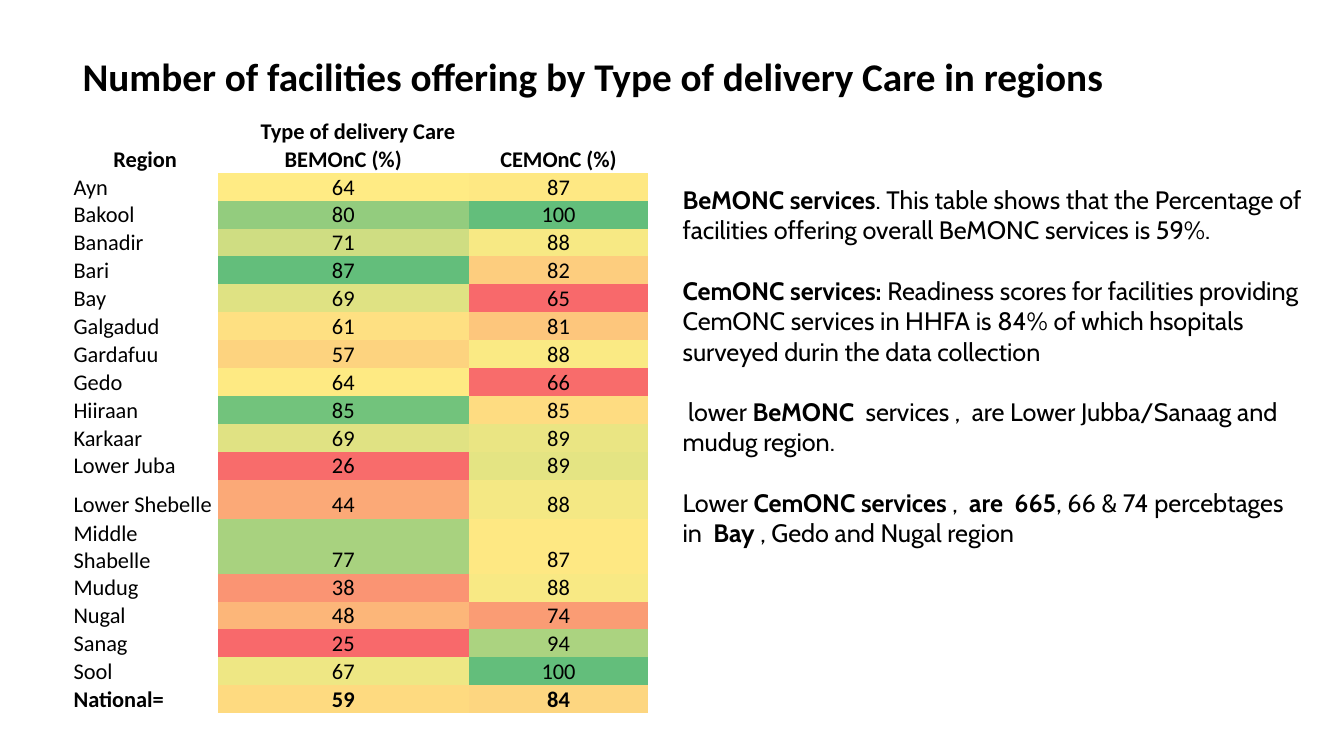
import pptx
import pptx.util
import pptx.dml.color
import pptx.enum.text
import pptx.oxml.ns
import lxml.etree

Inches, Pt = pptx.util.Inches, pptx.util.Pt
RGBColor = pptx.dml.color.RGBColor
ALIGN = pptx.enum.text.PP_ALIGN
ANCHOR = pptx.enum.text.MSO_ANCHOR
AUTO_SIZE = pptx.enum.text.MSO_AUTO_SIZE
qn = pptx.oxml.ns.qn

# Content
BLACK = RGBColor(0x00, 0x00, 0x00)
TITLE = "Number of facilities offering by Type of delivery Care in regions"
GROUP_HEADING = "Type of delivery Care "
HEADINGS = ("Region", "BEMOnC (%)", "CEMOnC (%)")
# Region, BEMOnC value and shade, CEMOnC value and shade
REGIONS = [
    ("Ayn", 64, "FFEB84", 87, "FEE883"),
    ("Bakool", 80, "93CC7E", 100, "63BE7B"),
    ("Banadir", 71, "CFDD82", 88, "F7E984"),
    ("Bari", 87, "63BE7B", 82, "FDCD7E"),
    ("Bay", 69, "DFE283", 65, "F8696B"),
    ("Galgadud", 61, "FEE082", 81, "FDC67C"),
    ("Gardafuu", 57, "FDD37F", 88, "FAEA84"),
    ("Gedo", 64, "FEEA83", 66, "F86C6B"),
    ("Hiiraan", 85, "72C37C", 85, "FEDC81"),
    ("Karkaar", 69, "E0E283", 89, "EAE583"),
    ("Lower Juba", 26, "F86C6B", 89, "E4E483"),
    ("Lower Shebelle", 44, "FBA977", 88, "F4E884"),
    ("Middle Shabelle", 77, "A8D27F", 87, "FEE883"),
    ("Mudug", 38, "FA9473", 88, "F8E984"),
    ("Nugal", 48, "FCB679", 74, "FA9C74"),
    ("Sanag", 25, "F8696B", 94, "ABD380"),
    ("Sool", 67, "EEE784", 100, "63BE7B"),
    ("National=", 59, "FEDA80", 84, "FDD680"),
]
TALL_REGIONS = ("Lower Shebelle", "Middle Shabelle")
# Paragraphs of (text, bold) runs
FINDINGS = [
    [("BeMONC services", True),
     (". This table shows that the Percentage of facilities offering overall "
      "BeMONC services is 59%.", False)],
    [("CemONC services: ", True),
     ("Readiness scores for facilities providing  CemONC services in HHFA is 84% "
      "of which hsopitals surveyed durin the data collection", False)],
    [(" lower ", False), ("BeMONC  ", True),
     ("services ,  are Lower Jubba/Sanaag and mudug region.", False)],
    [("Lower ", False), ("CemONC services", True), (" , ", False), (" are  665", True),
     (", 66 & 74 percebtages in  ", False), ("Bay", True),
     (" , Gedo and Nugal region", False)],
]

# Layout
COLUMN_WIDTHS = (1.44, 2.49, 1.78)
ROW_HEIGHT, TALL_ROW_HEIGHT = 0.21, 0.39
NO_GRID_STYLE = "{2D5ABB26-0587-4C30-8999-92F81FD0307C}"


def add_run(paragraph, text, font, size, bold):
    run = paragraph.add_run()
    run.text = text
    run.font.name, run.font.size, run.font.bold = font, Pt(size), bold
    run.font.color.rgb = BLACK


def place(shape, left, top, width, height):
    shape.left, shape.top = Inches(left), Inches(top)
    shape.width, shape.height = Inches(width), Inches(height)


def fill_cell(cell, text, bold, align, shade=None):
    cell.margin_left = cell.margin_right = cell.margin_top = Inches(0.01)
    cell.margin_bottom = 0
    cell.vertical_anchor = ANCHOR.BOTTOM
    if shade:
        cell.fill.solid()
        cell.fill.fore_color.rgb = RGBColor.from_string(shade)
    else:
        cell.fill.background()
    paragraph = cell.text_frame.paragraphs[0]
    paragraph.alignment = align
    add_run(paragraph, text, "Calibri", 16, bold)


def add_title(slide):
    title = slide.shapes.title
    place(title, 0.72, 0.4, 11.7, 0.76)
    title.text_frame.vertical_anchor = ANCHOR.MIDDLE
    heading = title.text_frame.paragraphs[0]
    heading.alignment = ALIGN.LEFT
    heading.line_spacing = 0.9
    add_run(heading, TITLE, "Calibri", 28, True)


def add_region_table(slide):
    heights = [ROW_HEIGHT] * 2 + [
        TALL_ROW_HEIGHT if region[0] in TALL_REGIONS else ROW_HEIGHT for region in REGIONS]
    frame = slide.shapes.add_table(
        len(heights), len(COLUMN_WIDTHS), Inches(0.72), Inches(1.16),
        Inches(sum(COLUMN_WIDTHS)), Inches(sum(heights)))
    table = frame.table
    table.first_row = table.horz_banding = False
    next(frame.element.iter(qn("a:tableStyleId"))).text = NO_GRID_STYLE
    for column, width in zip(table.columns, COLUMN_WIDTHS):
        column.width = Inches(width)
    for row, height in zip(table.rows, heights):
        row.height = Inches(height)

    # Heading rows
    table.cell(0, 0).merge(table.cell(0, 2))
    fill_cell(table.cell(0, 0), GROUP_HEADING, True, ALIGN.CENTER)
    for column, heading in enumerate(HEADINGS):
        fill_cell(table.cell(1, column), heading, True, ALIGN.CENTER)

    # Region rows, the national total in bold
    for row, (name, bemonc, bemonc_shade, cemonc, cemonc_shade) in enumerate(REGIONS, 2):
        bold = row == len(heights) - 1
        fill_cell(table.cell(row, 0), name, bold, ALIGN.LEFT)
        fill_cell(table.cell(row, 1), str(bemonc), bold, ALIGN.CENTER, bemonc_shade)
        fill_cell(table.cell(row, 2), str(cemonc), bold, ALIGN.CENTER, cemonc_shade)


def add_findings(slide):
    findings = slide.placeholders[1]
    place(findings, 6.67, 1.78, 6.37, 4.04)
    text_frame = findings.text_frame
    text_frame.word_wrap = True
    text_frame.auto_size = AUTO_SIZE.SHAPE_TO_FIT_TEXT
    text_frame.vertical_anchor = ANCHOR.TOP
    for index, runs in enumerate(FINDINGS):
        paragraph = text_frame.add_paragraph() if index else text_frame.paragraphs[0]
        paragraph.alignment = ALIGN.LEFT
        paragraph.space_before = Pt(21.7 if index else 0)
        properties = paragraph._p.get_or_add_pPr()
        properties.set("marL", "0")
        properties.set("indent", "0")
        lxml.etree.SubElement(properties, qn("a:buNone"))
        for text, bold in runs:
            add_run(paragraph, text, "Cabin", 18, bold)


def main():
    presentation = pptx.Presentation()
    presentation.slide_width, presentation.slide_height = Inches(13.33), Inches(7.5)
    slide = presentation.slides.add_slide(presentation.slide_layouts[1])
    add_title(slide)
    add_region_table(slide)
    add_findings(slide)
    presentation.save("out.pptx")


if __name__ == "__main__":
    main()
